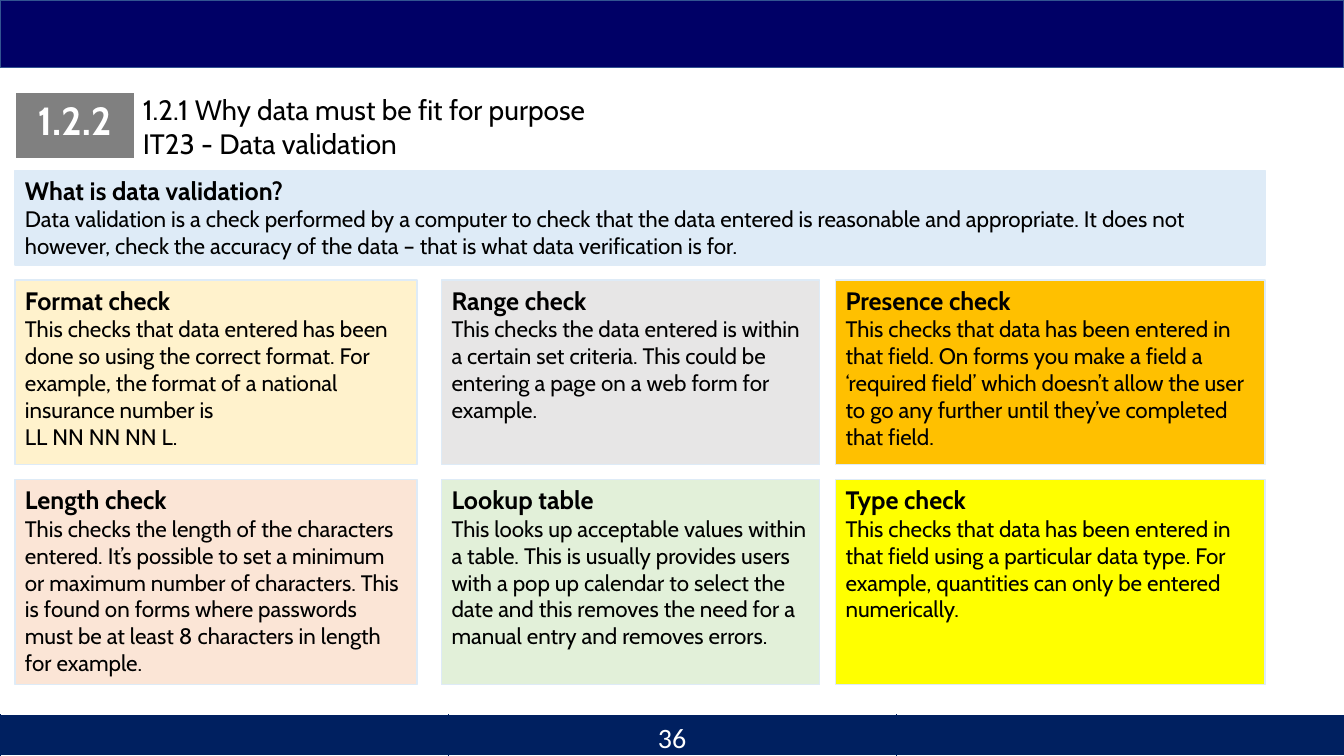
from dataclasses import dataclass

from lxml.etree import SubElement
from pptx import Presentation
from pptx.dml.color import RGBColor
from pptx.enum.shapes import MSO_SHAPE
from pptx.enum.text import MSO_ANCHOR, PP_ALIGN
from pptx.oxml.ns import qn
from pptx.util import Cm, Pt

COLOURS = {
    "white": "FFFFFF",
    "black": "000000",
    "banner": "000066",
    "banner line": "325491",
    "footer": "002060",
    "grey": "808080",
    "pale blue": "DEEBF7",
    "cream": "FFF2CC",
    "peach": "FBE5D6",
    "light grey": "E7E6E6",
    "pale green": "E2F0D9",
    "orange": "FFC000",
    "yellow": "FFFF00",
}
HEADING = {"size": Pt(18), "name": "Cabin", "bold": True}
BODY = {"size": Pt(16), "name": "Cabin", "bold": False}
TITLE = {"size": Pt(20), "name": "Cabin"}
SECTION = {"size": Pt(28), "name": "Cabin", "bold": True}
PAGE_NUMBER = {"size": Pt(20), "name": "Calibri"}

SLIDE_WIDTH, SLIDE_HEIGHT = 33.87, 19.05
COLUMNS = [(0.38, 10.13), (11.13, 9.53), (21.06, 10.82)]  # left, width
ROWS = [(7.06, 4.65), (12.09, 5.16)]  # top, height


@dataclass
class Box:
    left: float
    top: float
    width: float
    height: float

    def lengths(self) -> list:
        return [Cm(value) for value in (self.left, self.top, self.width, self.height)]


@dataclass
class Card:
    heading: str
    body: list[str]
    fill: str


INTRODUCTION = Card("What is data validation?", [
    "Data validation is a check performed by a computer to check that the data entered is "
    "reasonable and appropriate. It does not however, check the accuracy of the data – that is "
    "what data verification is for."], "pale blue")

CHECKS = [
    [
        Card("Format check", [
            "This checks that data entered has been done so using the correct format. For example, "
            "the format of a national insurance number is", "LL NN NN NN L."], "cream"),
        Card("Range check", [
            "This checks the data entered is within a certain set criteria. This could be entering "
            "a page on a web form for example."], "light grey"),
        Card("Presence check", [
            "This checks that data has been entered in that field. On forms you make a field a "
            "‘required field’ which doesn’t allow the user to go any further until they’ve "
            "completed that field."], "orange"),
    ],
    [
        Card("Length check", [
            "This checks the length of the characters entered. It’s possible to set a minimum or "
            "maximum number of characters. This is found on forms where passwords must be at least "
            "8 characters in length for example."], "peach"),
        Card("Lookup table", [
            "This looks up acceptable values within a table. This is usually provides users with a "
            "pop up calendar to select the date and this removes the need for a manual entry and "
            "removes errors."], "pale green"),
        Card("Type check", [
            "This checks that data has been entered in that field using a particular data type. "
            "For example, quantities can only be entered numerically."], "yellow"),
    ],
]


def colour(name: str) -> RGBColor:
    return RGBColor.from_string(COLOURS[name])


def write(text_frame, lines: list[tuple[str, dict]], text_colour: str, alignment=PP_ALIGN.LEFT) -> None:
    text_frame.word_wrap = True
    for index, (text, font_format) in enumerate(lines):
        paragraph = text_frame.add_paragraph() if index else text_frame.paragraphs[0]
        paragraph.alignment = alignment
        run = paragraph.add_run()
        run.text = text
        run.font.color.rgb = colour(text_colour)
        for attribute, value in font_format.items():
            setattr(run.font, attribute, value)


def add_rectangle(slide, box: Box, fill: str, line: str):
    shape = slide.shapes.add_shape(MSO_SHAPE.RECTANGLE, *box.lengths())
    shape.shadow.inherit = False
    shape.fill.solid()
    shape.fill.fore_color.rgb = colour(fill)
    shape.line.color.rgb = colour(line)
    shape.line.width = Pt(1)
    return shape


def add_card(slide, box: Box, card: Card) -> None:
    text_frame = add_rectangle(slide, box, card.fill, "pale blue").text_frame
    text_frame.vertical_anchor = MSO_ANCHOR.TOP
    lines = [(card.heading, HEADING)] + [(text, BODY) for text in card.body]
    write(text_frame, lines, "black")


def add_text(slide, box: Box, lines: list[tuple[str, dict]], text_colour: str, alignment=PP_ALIGN.LEFT) -> None:
    text_box = slide.shapes.add_textbox(*box.lengths())
    write(text_box.text_frame, lines, text_colour, alignment)


def add_strip(slide, box: Box, columns: int, fill: str, borders: dict[str, float], border_colour: str):
    """Add a one-row table; borders maps each side's tag to its width in points."""
    table = slide.shapes.add_table(1, columns, *box.lengths()).table
    table.first_row = table.horz_banding = False
    for cell in table.iter_cells():
        properties = cell._tc.get_or_add_tcPr()
        for side, width in borders.items():
            line = SubElement(properties, qn(f"a:{side}"), w=str(Pt(width)))
            line_fill = SubElement(line, qn("a:solidFill"))
            SubElement(line_fill, qn("a:srgbClr"), val=COLOURS[border_colour])
        cell.fill.solid()
        cell.fill.fore_color.rgb = colour(fill)
    return table


def main() -> None:
    presentation = Presentation()
    presentation.slide_width = Cm(SLIDE_WIDTH)
    presentation.slide_height = Cm(SLIDE_HEIGHT)
    slide = presentation.slides.add_slide(presentation.slide_layouts[6])

    # Footer strip and top banner
    add_strip(slide, Box(0, 18.01, SLIDE_WIDTH, 1.04), 3, "footer", {"lnL": 0.5, "lnR": 0.5}, "footer")
    add_rectangle(slide, Box(0, 0, SLIDE_WIDTH, 1.7), "banner", "banner line")

    # Title and section number
    add_text(slide, Box(3.35, 2.21, 21.41, 1.96), [
        ("1.2.1 Why data must be fit for purpose", TITLE), ("IT23 - Data validation", TITLE)], "black")
    section = add_strip(slide, Box(0.38, 2.34, 3, 1.7), 1, "grey",
                        {"lnL": 1, "lnR": 1, "lnT": 1, "lnB": 3}, "white")
    write(section.cell(0, 0).text_frame, [("1.2.2", SECTION)], "white", PP_ALIGN.CENTER)

    # Introduction and the grid of checks
    add_card(slide, Box(0.38, 4.29, 31.5, 2.39), INTRODUCTION)
    for (top, height), cards in zip(ROWS, CHECKS):
        for (left, width), card in zip(COLUMNS, cards):
            add_card(slide, Box(left, top, width, height), card)

    # Page number
    add_text(slide, Box(13.13, 18.03, 7.62, 1.02), [("36", PAGE_NUMBER)], "white", PP_ALIGN.CENTER)

    presentation.save("out.pptx")


if __name__ == "__main__":
    main()
